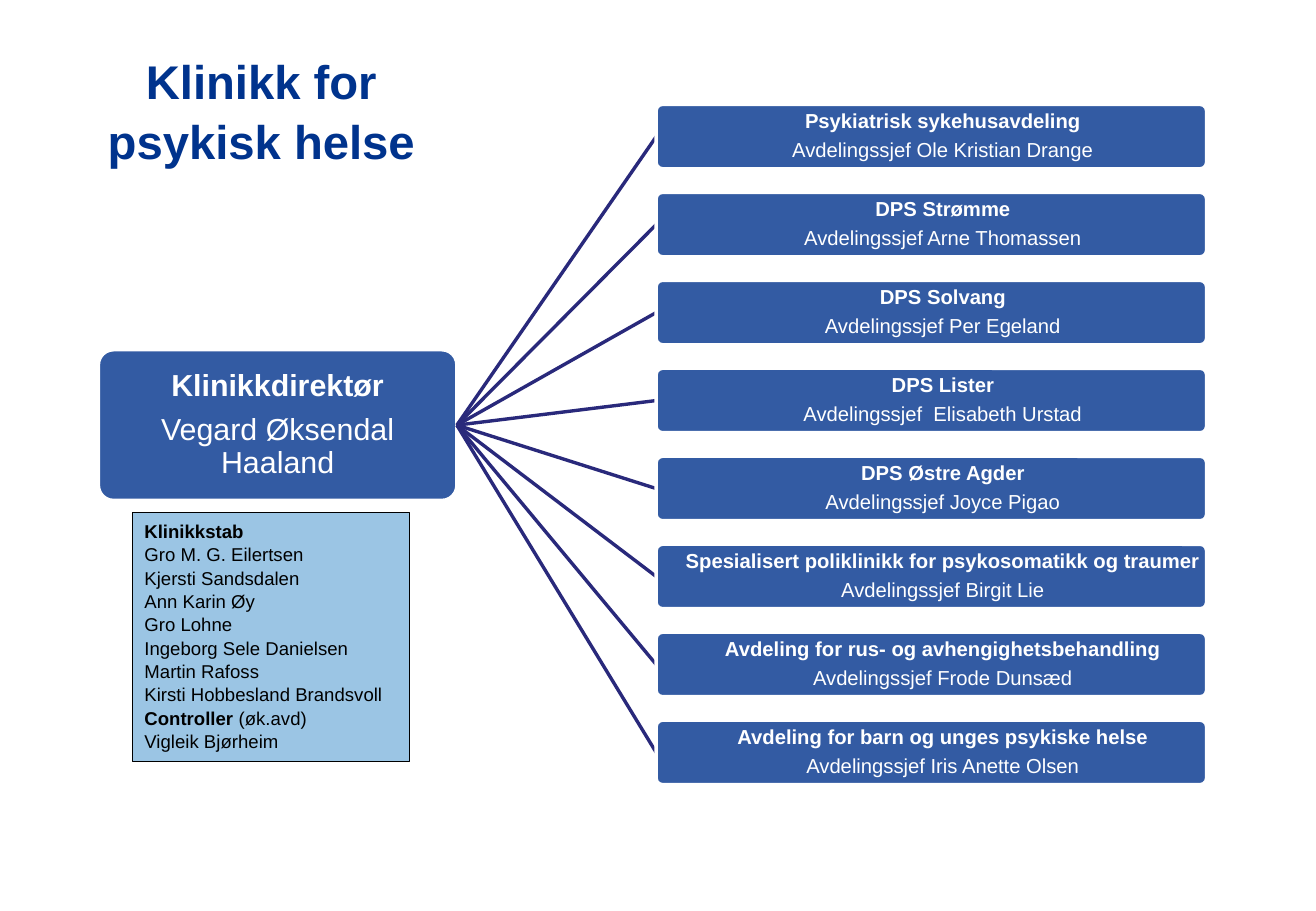
from dataclasses import dataclass

import lxml.etree
import pptx
import pptx.dml.color
import pptx.enum.shapes
import pptx.enum.text
import pptx.oxml.ns
import pptx.util

Inches = pptx.util.Inches
Pt = pptx.util.Pt
qn = pptx.oxml.ns.qn
ALIGN = pptx.enum.text.PP_ALIGN
ANCHOR = pptx.enum.text.MSO_ANCHOR
SHAPE = pptx.enum.shapes.MSO_SHAPE
RIGHT_SIDE, LEFT_SIDE = 3, 1


@dataclass(frozen=True)
class Theme:
    font: str = "Arial"
    navy: str = "00338D"
    link: str = "29297B"
    staff: str = "7AB2DC"
    white: str = "FFFFFF"
    black: str = "000000"
    title_size: float = 28
    director_size: float = 18
    department_size: float = 12
    staff_size: float = 11


DIRECTOR = ("Klinikkdirektør", "Vegard Øksendal Haaland")
DEPARTMENTS = [
    ("Psykiatrisk sykehusavdeling", "Ole Kristian Drange"),
    ("DPS Strømme", "Arne Thomassen"),
    ("DPS Solvang", "Per Egeland"),
    ("DPS Lister", " Elisabeth Urstad"),
    ("DPS Østre Agder", "Joyce Pigao"),
    ("Spesialisert poliklinikk for psykosomatikk og traumer", "Birgit Lie"),
    ("Avdeling for rus- og avhengighetsbehandling", "Frode Dunsæd"),
    ("Avdeling for barn og unges psykiske helse", "Iris Anette Olsen"),
]
STAFF = [
    "Gro M. G. Eilertsen", "Kjersti Sandsdalen", "Ann Karin Øy", "Gro Lohne",
    "Ingeborg Sele Danielsen", "Martin Rafoss", "Kirsti Hobbesland Brandsvoll",
]
DEPARTMENT_LEFT, DEPARTMENT_TOP = 5.4, 0.86
DEPARTMENT_WIDTH, DEPARTMENT_HEIGHT = 4.53, 0.53
DEPARTMENT_PITCH = (5.93 - DEPARTMENT_TOP) / (len(DEPARTMENTS) - 1)


def rgb(color):
    return pptx.dml.color.RGBColor.from_string(color)


def write_text(shape, paragraphs, *, font, size, color, align=ALIGN.LEFT, anchor=ANCHOR.TOP,
               line_spacing=1.05, space_after=0, indent=0, margins=(0.1, 0.05)):
    """Fill a shape with paragraphs, each a list of (text, bold) runs."""
    frame = shape.text_frame
    frame.word_wrap = True
    frame.vertical_anchor = anchor
    frame.margin_left = frame.margin_right = Inches(margins[0])
    frame.margin_top = frame.margin_bottom = Inches(margins[1])
    for index, runs in enumerate(paragraphs):
        paragraph = frame.add_paragraph() if index else frame.paragraphs[0]
        paragraph.alignment = align
        paragraph.line_spacing = line_spacing
        paragraph.space_after = Pt(space_after)
        if indent:
            paragraph._p.get_or_add_pPr().set("marL", str(Inches(indent)))
        for text, bold in runs:
            run = paragraph.add_run()
            run.text = text
            run.font.name = font
            run.font.size = Pt(size)
            run.font.bold = bold
            run.font.color.rgb = rgb(color)


class OrganisationChart:
    def __init__(self, slide, theme):
        self.slide = slide
        self.theme = theme

    def title(self, text, left, top, width, height):
        box = self.slide.shapes.add_textbox(
            Inches(left), Inches(top), Inches(width), Inches(height))
        write_text(box, [[(text, True)]], font=self.theme.font, size=self.theme.title_size,
                   color=self.theme.navy, align=ALIGN.CENTER)

    def box(self, kind, left, top, width, height, *, fill, opacity, line, line_width):
        shape = self.slide.shapes.add_shape(
            kind, Inches(left), Inches(top), Inches(width), Inches(height))
        shape.shadow.inherit = False
        shape.fill.solid()
        shape.fill.fore_color.rgb = rgb(fill)
        color = shape._element.spPr.find(qn("a:solidFill"))[0]
        lxml.etree.SubElement(color, qn("a:alpha"), val=str(opacity * 1000))
        shape.line.color.rgb = rgb(line)
        shape.line.width = Pt(line_width)
        return shape

    def unit(self, heading, leader, left, top, width, height, *, size, indent=0):
        """Add a rounded box with a bold heading above its leader."""
        shape = self.box(SHAPE.ROUNDED_RECTANGLE, left, top, width, height,
                         fill=self.theme.navy, opacity=80,
                         line=self.theme.white, line_width=2)
        shape.adjustments[0] = 0.1
        write_text(shape, [[(heading, True)], [(leader, False)]], font=self.theme.font,
                   size=size, color=self.theme.white, align=ALIGN.CENTER,
                   anchor=ANCHOR.MIDDLE, line_spacing=0.9, space_after=round(size * 0.38, 1),
                   indent=indent, margins=(0.01, 0.01))
        return shape

    def link(self):
        connector = self.slide.shapes.add_connector(
            pptx.enum.shapes.MSO_CONNECTOR.STRAIGHT, 0, 0, 0, 0)
        connector.line.color.rgb = rgb(self.theme.link)
        connector.line.width = Pt(2)
        lxml.etree.SubElement(connector._element.spPr, qn("a:effectLst"))
        return connector

    def departments(self, director):
        """Stack the departments, each box in front of its link to the director."""
        for row, (name, leader) in enumerate(DEPARTMENTS):
            link = self.link()
            department = self.unit(
                name, f"Avdelingssjef {leader}", DEPARTMENT_LEFT,
                DEPARTMENT_TOP + row * DEPARTMENT_PITCH, DEPARTMENT_WIDTH, DEPARTMENT_HEIGHT,
                size=self.theme.department_size, indent=0.19)
            link.begin_connect(director, RIGHT_SIDE)
            link.end_connect(department, LEFT_SIDE)

    def staff(self, left, top, width, height):
        shape = self.box(SHAPE.RECTANGLE, left, top, width, height, fill=self.theme.staff,
                         opacity=75, line=self.theme.black, line_width=0.75)
        paragraphs = [
            [("Klinikkstab", True)],
            *[[(name, False)] for name in STAFF],
            [("Controller", True), (" (øk.avd)", False)],
            [("Vigleik Bjørheim", False)],
        ]
        write_text(shape, paragraphs, font=self.theme.font, size=self.theme.staff_size,
                   color=self.theme.black)


def main():
    presentation = pptx.Presentation()
    presentation.slide_width = Inches(10.83)
    presentation.slide_height = Inches(7.5)
    theme = Theme()
    chart = OrganisationChart(
        presentation.slides.add_slide(presentation.slide_layouts[6]), theme)
    chart.title("Klinikk for psykisk helse", 0.38, 0.36, 3.54, 1.73)
    director = chart.unit(*DIRECTOR, 0.81, 2.88, 2.95, 1.24, size=theme.director_size)
    chart.departments(director)
    chart.staff(1.09, 4.22, 2.28, 2.05)
    presentation.save("out.pptx")


if __name__ == "__main__":
    main()
